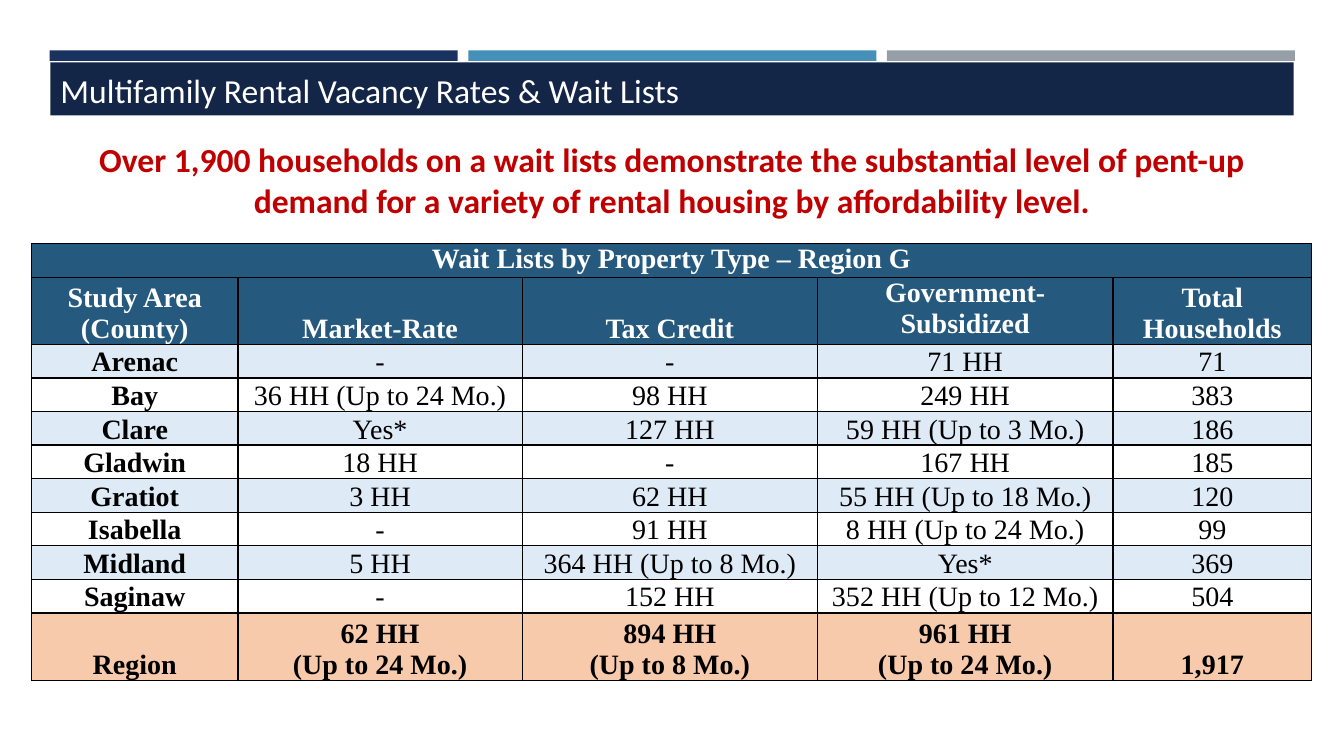
from lxml import etree
from pptx import Presentation
from pptx import util as u
from pptx.dml.color import RGBColor
from pptx.enum import shapes, text
from pptx.oxml import ns

PX = u.Inches(1) // 144  # 144 px to the inch

WHITE = RGBColor(0xFF, 0xFF, 0xFF)
BLACK = RGBColor(0, 0, 0)
NAVY = RGBColor(0x1A, 0x32, 0x60)
BLUE = RGBColor(0x45, 0x90, 0xB8)
GRAY = RGBColor(0x96, 0x9F, 0xA7)
TITLE_NAVY = RGBColor(0x14, 0x26, 0x48)
RED = RGBColor(0xC0, 0, 0)
HEADER_BLUE = RGBColor(0x25, 0x59, 0x7D)
BAND_BLUE = RGBColor(0xDE, 0xEA, 0xF6)
TOTAL_PEACH = RGBColor(0xF7, 0xCA, 0xAC)

COLUMN_WIDTHS = [295, 406, 422, 422, 284]
LINE_HEIGHT = 48
HEADING = "Wait Lists by Property Type – Region G"
COLUMN_NAMES = ["Study Area\n(County)", "Market-Rate", "Tax Credit",
                "Government-Subsidized", "Total\nHouseholds"]
COUNTIES = [
    ["Arenac", "-", "-", "71 HH", "71"],
    ["Bay", "36 HH (Up to 24 Mo.)", "98 HH", "249 HH", "383"],
    ["Clare", "Yes*", "127 HH", "59 HH (Up to 3 Mo.)", "186"],
    ["Gladwin", "18 HH", "-", "167 HH", "185"],
    ["Gratiot", "3 HH", "62 HH", "55 HH (Up to 18 Mo.)", "120"],
    ["Isabella", "-", "91 HH", "8 HH (Up to 24 Mo.)", "99"],
    ["Midland", "5 HH", "364 HH (Up to 8 Mo.)", "Yes*", "369"],
    ["Saginaw", "-", "152 HH", "352 HH (Up to 12 Mo.)", "504"],
]
REGION = ["Region", "62 HH\n(Up to 24 Mo.)", "894 HH\n(Up to 8 Mo.)",
          "961 HH\n(Up to 24 Mo.)", "1,917"]


def px(*lengths):
    return [length * PX for length in lengths]


def add_run(paragraph, words, size, font_name, color, bold=False):
    run = paragraph.add_run()
    run.text = words
    run.font.size = u.Pt(size)
    run.font.name = font_name
    run.font.bold = bold
    run.font.color.rgb = color


def add_bar(slide, left, color):
    bar = slide.shapes.add_shape(shapes.MSO_SHAPE.RECTANGLE, *px(left, 72, 583, 15))
    bar.shadow.inherit = False
    bar.fill.solid()
    bar.fill.fore_color.rgb = color
    bar.line.fill.background()


def set_title(slide, words):
    title = slide.shapes.title
    title.left, title.top, title.width, title.height = px(72, 89, 1776, 76)
    title.fill.solid()
    title.fill.fore_color.rgb = TITLE_NAVY
    frame = title.text_frame
    frame.auto_size = text.MSO_AUTO_SIZE.NONE
    frame.vertical_anchor = text.MSO_ANCHOR.BOTTOM
    paragraph = frame.paragraphs[0]
    paragraph.alignment = text.PP_ALIGN.LEFT
    paragraph.line_spacing = 0.85
    add_run(paragraph, words, 24, "Calibri", WHITE)


def add_message(slide, words):
    box = slide.shapes.add_textbox(*px(72, 192, 1776, 131))
    box.text_frame.word_wrap = True
    paragraph = box.text_frame.paragraphs[0]
    paragraph.alignment = text.PP_ALIGN.CENTER
    add_run(paragraph, words, 24, "Calibri", RED, bold=True)


def set_borders(cell, top, bottom):
    properties = cell._tc.get_or_add_tcPr()
    widths = {"lnL": 1, "lnR": 1, "lnT": top, "lnB": bottom}
    for index, (side, width) in enumerate(widths.items()):
        line = etree.Element(ns.qn(f"a:{side}"), w=str(u.Pt(width)))
        fill = etree.SubElement(line, ns.qn("a:solidFill"))
        etree.SubElement(fill, ns.qn("a:srgbClr"), val=str(BLACK))
        properties.insert(index, line)


def fill_cell(cell, words, fill, color, bold, anchor):
    cell.fill.solid()
    cell.fill.fore_color.rgb = fill
    cell.margin_left = cell.margin_right = u.Inches(0.07)
    cell.margin_top = cell.margin_bottom = 0
    cell.vertical_anchor = anchor
    frame = cell.text_frame
    for index, line in enumerate(words.split("\n") if words else []):
        paragraph = frame.add_paragraph() if index else frame.paragraphs[0]
        paragraph.alignment = text.PP_ALIGN.CENTER
        add_run(paragraph, line, 20, "Times New Roman", color, bold)


def add_wait_lists(slide):
    rows = [[HEADING, "", "", "", ""], COLUMN_NAMES, *COUNTIES, REGION]
    last = len(rows) - 1
    table = slide.shapes.add_table(len(rows), len(COLUMN_WIDTHS),
                                   *px(45, 348, sum(COLUMN_WIDTHS), 624)).table
    for column, width in zip(table.columns, COLUMN_WIDTHS):
        column.width = width * PX
    table.cell(0, 0).merge(table.cell(0, len(COLUMN_WIDTHS) - 1))

    for r, row in enumerate(rows):
        table.rows[r].height = LINE_HEIGHT * (2 if r in (1, last) else 1) * PX
        if r < 2:
            fill = HEADER_BLUE
        elif r == last:
            fill = TOTAL_PEACH
        else:
            fill = WHITE if r % 2 else BAND_BLUE
        for c, words in enumerate(row):
            at_top = r == 0 or words == "Government-Subsidized"
            cell = table.cell(r, c)
            fill_cell(cell, words, fill,
                      color=WHITE if r < 2 else BLACK,
                      bold=r < 2 or r == last or c == 0,
                      anchor=text.MSO_ANCHOR.TOP if at_top else text.MSO_ANCHOR.BOTTOM)
            # A heavier rule sets off the region total
            set_borders(cell, top=2.25 if r == last else 1,
                        bottom=2.25 if r == last - 1 else 1)


def main():
    presentation = Presentation()
    presentation.slide_width, presentation.slide_height = px(1920, 1080)
    slide = presentation.slides.add_slide(presentation.slide_layouts[5])

    # Header band
    for index, color in enumerate([NAVY, BLUE, GRAY]):
        add_bar(slide, 71 + 598 * index, color)
    set_title(slide, "Multifamily Rental Vacancy Rates & Wait Lists")

    # Wait list table and key message
    add_wait_lists(slide)
    add_message(slide, "Over 1,900 households on a wait lists demonstrate the substantial "
                       "level of pent-up demand for a variety of rental housing by "
                       "affordability level.")
    presentation.save("out.pptx")


if __name__ == "__main__":
    main()
